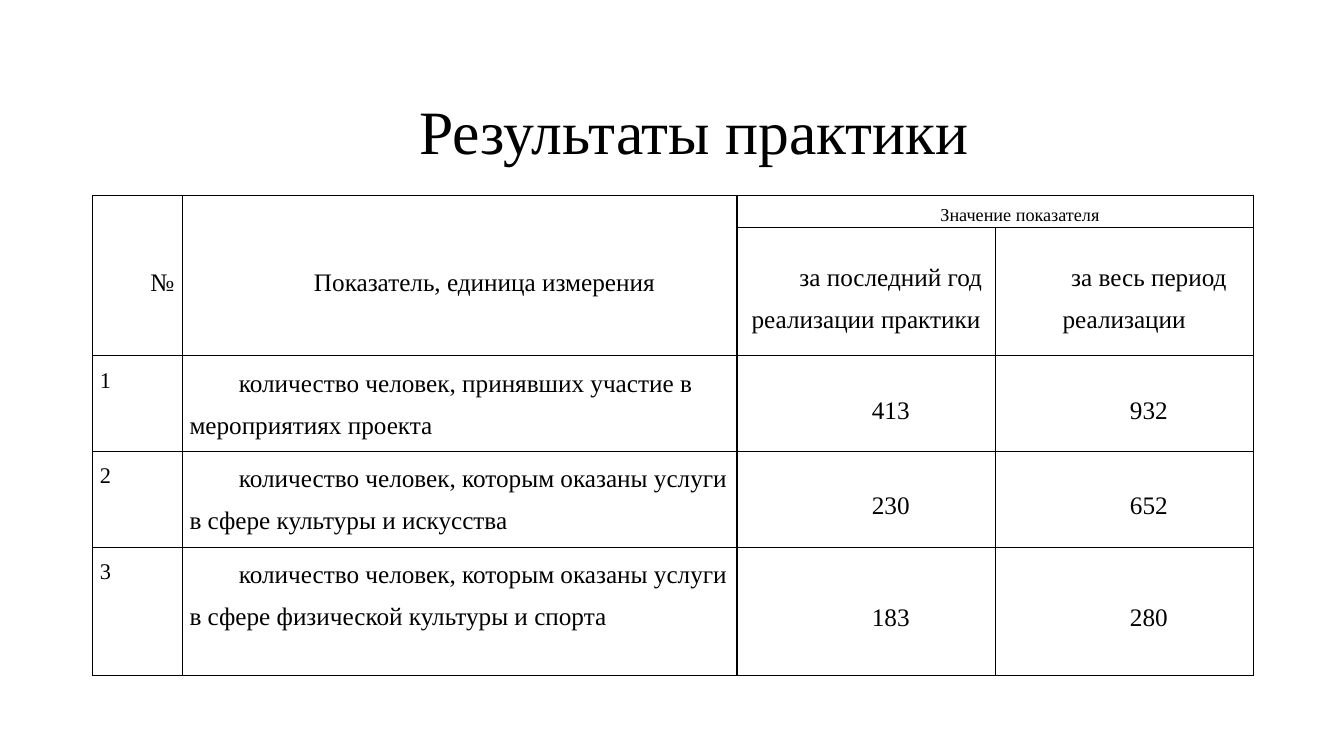
from pptx import Presentation
from pptx.dml.color import RGBColor
from pptx.enum.text import MSO_ANCHOR, MSO_AUTO_SIZE, PP_ALIGN
from pptx.oxml import parse_xml
from pptx.oxml.ns import nsdecls
from pptx.util import Inches, Pt

WIDE, HIGH = 13.33, 7.5
FONT = "Times New Roman"
INK = "000000"
COLS = [0.89, 5.5, 2.56, 2.56]
ROWS = [0.32, 1.27, 0.95, 0.95, 1.27]
HEADS = [
    (0, 0, "№", 18),
    (0, 1, "Показатель, единица измерения", 18),
    (0, 2, "Значение показателя", 13),
    (1, 2, "за последний год реализации практики", 18),
    (1, 3, "за весь период реализации", 18),
]
DATA = [
    ("количество человек, принявших участие в мероприятиях проекта", "413", "932"),
    ("количество человек, которым оказаны услуги в сфере культуры и искусства", "230", "652"),
    ("количество человек, которым оказаны услуги в сфере физической культуры и спорта", "183", "280"),
]


def color(code):
    return RGBColor.from_string(code)


def add_text(frame, words, size, align=PP_ALIGN.LEFT, indent=0.49, space=1.0):
    para = frame.paragraphs[0]
    para.alignment = align
    para.line_spacing = space
    props = para._p.get_or_add_pPr()
    props.set("marL", "0")
    props.set("indent", str(Inches(indent)))
    run = para.add_run()
    run.text = words
    run.font.name = FONT
    run.font.size = Pt(size)
    run.font.color.rgb = color(INK)


def add_title(slide, words):
    box = slide.shapes.add_textbox(Inches(3.57), Inches(0.87), Inches(6.2), Inches(0.84))
    frame = box.text_frame
    frame.word_wrap = False
    frame.auto_size = MSO_AUTO_SIZE.SHAPE_TO_FIT_TEXT
    frame.vertical_anchor = MSO_ANCHOR.MIDDLE
    add_text(frame, words, 44)


def style_cell(cell):
    cell.margin_left = cell.margin_right = Inches(0.07)
    cell.margin_top = cell.margin_bottom = 0
    cell.fill.background()
    props = cell._tc.get_or_add_tcPr()
    for spot, side in enumerate("LRTB"):
        props.insert(spot, parse_xml(
            f'<a:ln{side} {nsdecls("a")} w="{Pt(1)}"><a:solidFill>'
            f'<a:srgbClr val="{INK}"/></a:solidFill></a:ln{side}>'))


def add_grid(slide):
    shape = slide.shapes.add_table(
        len(ROWS), len(COLS), Inches(0.92), Inches(1.94),
        Inches(sum(COLS)), Inches(sum(ROWS)))
    table = shape.table
    table.first_row = table.horz_banding = False
    for col, width in zip(table.columns, COLS):
        col.width = Inches(width)
    for row, height in zip(table.rows, ROWS):
        row.height = Inches(height)
    for cell in table.iter_cells():
        style_cell(cell)
    for start, end in [((0, 0), (1, 0)), ((0, 1), (1, 1)), ((0, 2), (0, 3))]:
        table.cell(*start).merge(table.cell(*end))
    return table


def fill_cell(cell, words, size=18, align=PP_ALIGN.CENTER, anchor=MSO_ANCHOR.MIDDLE, indent=0.49):
    cell.vertical_anchor = anchor
    add_text(cell.text_frame, words, size, align, indent, 1.5)


def fill_grid(table):
    for row, col, words, size in HEADS:
        anchor = MSO_ANCHOR.TOP if size == 13 else MSO_ANCHOR.MIDDLE
        fill_cell(table.cell(row, col), words, size, anchor=anchor)
    for count, (label, *values) in enumerate(DATA, 1):
        row = count + 1
        fill_cell(table.cell(row, 0), str(count), 16, PP_ALIGN.LEFT, MSO_ANCHOR.TOP, 0)
        fill_cell(table.cell(row, 1), label, 18, PP_ALIGN.LEFT, MSO_ANCHOR.TOP)
        for col, value in enumerate(values, 2):
            fill_cell(table.cell(row, col), value)


def main():
    deck = Presentation()
    deck.slide_width, deck.slide_height = Inches(WIDE), Inches(HIGH)
    slide = deck.slides.add_slide(deck.slide_layouts[6])
    fill_grid(add_grid(slide))
    add_title(slide, "Результаты практики")
    deck.save("out.pptx")


if __name__ == "__main__":
    main()
